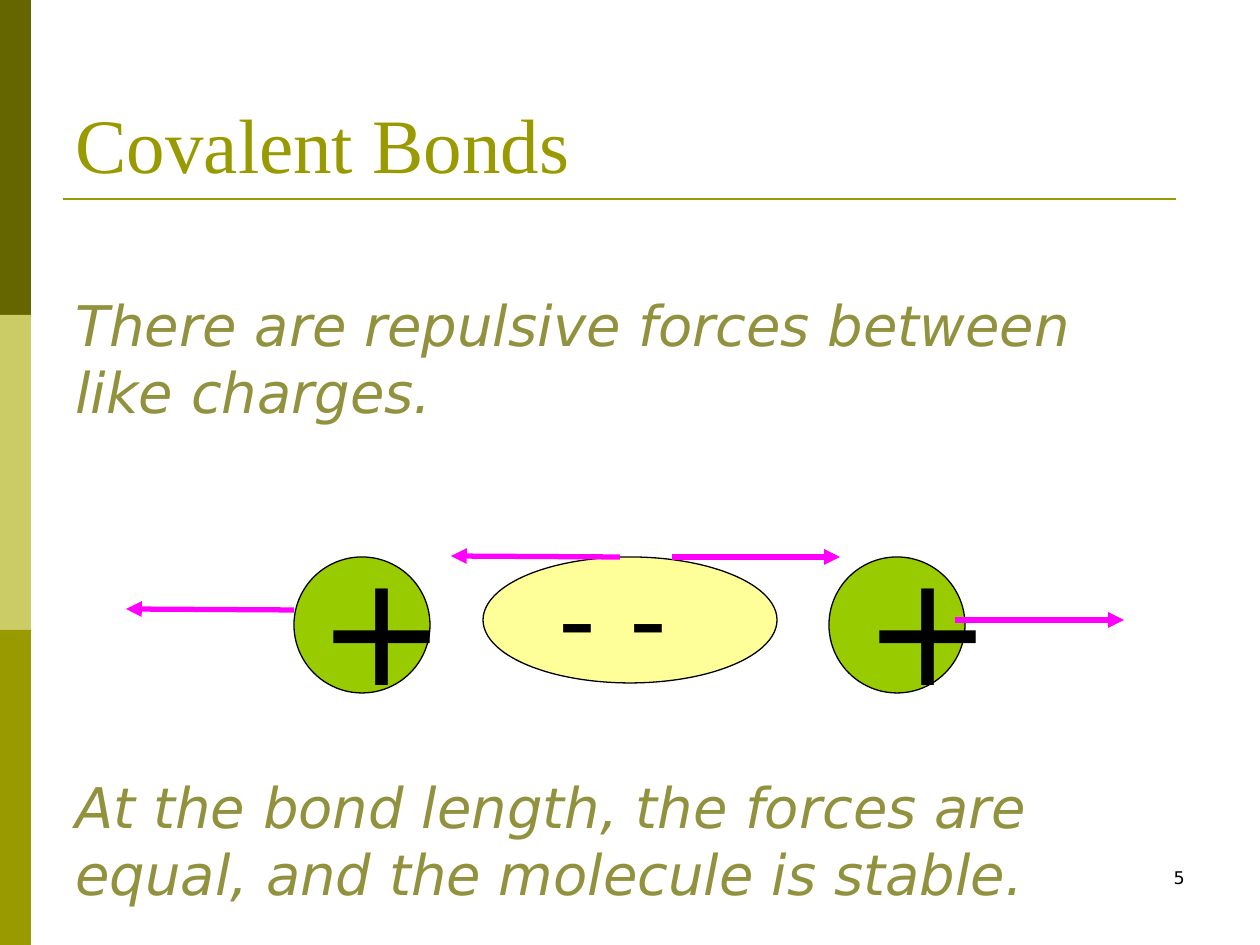
from lxml.etree import SubElement
from pptx import Presentation
from pptx.dml.color import RGBColor
from pptx.enum.shapes import MSO_CONNECTOR as Connector, MSO_SHAPE as Shape
from pptx.enum.text import MSO_ANCHOR as Anchor, PP_ALIGN as Align
from pptx.oxml.ns import qn
from pptx.util import Emu, Pt

PIXEL = 914400 / 126
BODY_FONT = "DejaVu Sans"


def px(value):
    return Emu(round(value * PIXEL))


def color(value):
    return RGBColor.from_string(value)


class SlideStyle:
    def __init__(self, page):
        self.page = page

    def format_text(self, frame, text, format_values, hue, align=Align.LEFT):
        frame.word_wrap = True
        para = frame.paragraphs[0]
        para.alignment = align
        span = para.add_run()
        span.text = text
        for name, value in format_values.items():
            setattr(span.font, name, value)
        span.font.color.rgb = color(hue)
        return para

    def title(self, text, *bounds):
        box = self.page.shapes.title
        box.left, box.top, box.width, box.height = map(px, bounds)
        box.text_frame.vertical_anchor = Anchor.BOTTOM
        values = {"name": "Times New Roman", "size": Pt(44)}
        self.format_text(box.text_frame, text, values, "999900")

    def text(self, text, bounds, size, hue="000000", italic=False,
             align=Align.LEFT, spaced=True):
        box = self.page.shapes.add_textbox(*map(px, bounds))
        values = {"name": BODY_FONT, "size": Pt(size), "italic": italic}
        para = self.format_text(box.text_frame, text, values, hue, align)
        if spaced:
            properties = para._p.get_or_add_pPr()
            before = SubElement(properties, qn("a:spcBef"))
            SubElement(before, qn("a:spcPct")).set("val", "50000")

    def shape(self, kind, bounds, fill, outline=None):
        shape = self.page.shapes.add_shape(kind, *map(px, bounds))
        shape.shadow.inherit = False
        shape.fill.solid()
        shape.fill.fore_color.rgb = color(fill)
        if outline:
            shape.line.color.rgb = color(outline)
            shape.line.width = Pt(0.75)
        else:
            shape.line.fill.background()

    def line(self, points, hue, width, arrow=False):
        line = self.page.shapes.add_connector(Connector.STRAIGHT, *map(px, points))
        line.line.color.rgb = color(hue)
        line.line.width = Pt(width)
        if arrow:
            SubElement(line.line._get_or_add_ln(), qn("a:tailEnd")).set("type", "triangle")
        SubElement(line._element.spPr, qn("a:effectLst"))


def main():
    deck = Presentation()
    deck.slide_width, deck.slide_height = px(1260), px(945)
    style = SlideStyle(deck.slides.add_slide(deck.slide_layouts[5]))

    for index, fill in enumerate(("666600", "CCCC66", "999900")):
        style.shape(Shape.RECTANGLE, (0, index * 315, 31, 315), fill)
    style.line((63, 199, 1176, 199), "999900", 1.5)
    style.text("5", (903, 861, 294, 63), 10, align=Align.RIGHT, spaced=False)
    style.title("Covalent Bonds", 63, 38, 1134, 157)

    for left in (294, 829):
        style.shape(Shape.OVAL, (left, 557, 136, 136), "99CC00", "000000")
    style.shape(Shape.OVAL, (483, 557, 294, 126), "FFFF99", "000000")
    for left in (305, 851):
        style.text("+", (left, 525, 220, 198), 88)
    style.text("- -", (546, 546, 262, 139), 60)

    forces = (
        (955, 620, 1124, 620),
        (294, 610, 126, 609),
        (672, 557, 840, 557),
        (620, 557, 451, 556),
    )
    for points in forces:
        style.line(points, "FF00FF", 3, arrow=True)

    statements = (
        ("There are repulsive forces between like charges.", 284, 1124),
        ("At the bond length, the forces are equal, and the molecule is stable.", 766, 1071),
    )
    for text, top, width in statements:
        style.text(text, (63, top, width, 147), 32, "91913E", italic=True)

    deck.save("out.pptx")


if __name__ == "__main__":
    main()
